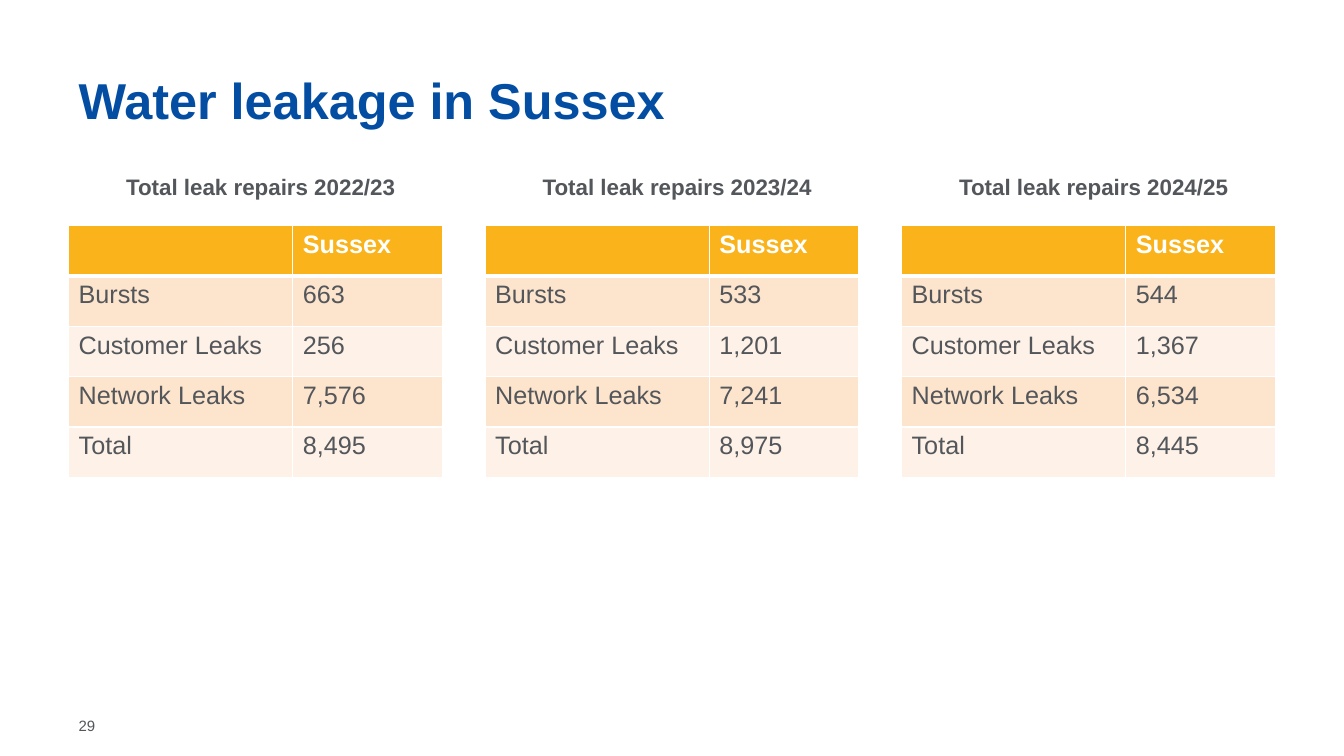
import pptx
import pptx.util
import pptx.dml.color
import pptx.enum.text
import pptx.oxml

Pt = pptx.util.Pt
ANCHOR = pptx.enum.text.MSO_ANCHOR
COLORS = {"title": "034EA2", "text": "53565A", "white": "FFFFFF",
          "header": "FAB31A", "dark_band": "FDE5CD", "light_band": "FEF2E8"}
FORMATS = {
    "title": {"size": Pt(36), "bold": True, "name": "Arial"},
    "caption": {"size": Pt(16), "bold": True, "name": "Arial"},
    "header": {"size": Pt(18), "bold": True, "name": "Arial"},
    "body": {"size": Pt(18), "bold": False, "name": "Arial"},
    "number": {"size": Pt(10.7), "bold": False, "name": "Arial"},
}
LABELS = ["Bursts", "Customer Leaks", "Network Leaks", "Total"]
REPAIRS = {
    "2022/23": ["663", "256", "7,576", "8,495"],
    "2023/24": ["533", "1,201", "7,241", "8,975"],
    "2024/25": ["544", "1,367", "6,534", "8,445"],
}


def rgb(key):
    """Return the named colour."""
    return pptx.dml.color.RGBColor.from_string(COLORS[key])


def write(tf, text, style, color):
    """Write one formatted paragraph and return it."""
    p = tf.paragraphs[0]
    r = p.add_run()
    r.text = text
    for name, value in FORMATS[style].items():
        setattr(r.font, name, value)
    r.font.color.rgb = rgb(color)
    return p


def add_title(s, x, y, w, h):
    """Place the slide title in the title placeholder."""
    sp = s.shapes.title
    sp.left, sp.top, sp.width, sp.height = Pt(x), Pt(y), Pt(w), Pt(h)
    tf = sp.text_frame
    tf.auto_size = pptx.enum.text.MSO_AUTO_SIZE.NONE
    tf.vertical_anchor = ANCHOR.TOP
    p = write(tf, "Water leakage in Sussex", "title", "title")
    p.alignment = pptx.enum.text.PP_ALIGN.LEFT
    p.line_spacing = Pt(40)


def add_text(s, x, y, w, h, text, style, anchor=ANCHOR.TOP):
    """Place a line of text in a box."""
    tf = s.shapes.add_textbox(Pt(x), Pt(y), Pt(w), Pt(h)).text_frame
    tf.word_wrap = True
    tf.vertical_anchor = anchor
    write(tf, text, style, "text")


def set_borders(cell, row):
    """Draw white cell borders, heavier below the header row."""
    widths = {"L": 1, "R": 1, "T": 3 if row == 1 else 1, "B": 3 if row == 0 else 1}
    tcPr = cell._tc.get_or_add_tcPr()
    for side, width in widths.items():
        tcPr.append(pptx.oxml.parse_xml(
            f'<a:ln{side} xmlns:a="http://schemas.openxmlformats.org/drawingml/2006/main" '
            f'w="{Pt(width)}"><a:solidFill><a:srgbClr val="{COLORS["white"]}"/>'
            f'</a:solidFill></a:ln{side}>'))


def add_repairs(s, x, y, w, h, year, values):
    """Place the caption and table of one year."""
    caption_h, table_top = 27, 41
    add_text(s, x + 34, y, 209, caption_h, f"Total leak repairs {year}", "caption")
    rows = [("", "Sussex"), *zip(LABELS, values)]
    tbl = s.shapes.add_table(len(rows), 2, Pt(x), Pt(y + table_top),
                             Pt(w), Pt(h - table_top)).table
    for column, share in zip(tbl.columns, (0.6, 0.4)):
        column.width = Pt(w * share)
    for i, row in enumerate(rows):
        band = "header" if i == 0 else "dark_band" if i % 2 else "light_band"
        for j, text in enumerate(row):
            cell = tbl.cell(i, j)
            set_borders(cell, i)
            cell.fill.solid()
            cell.fill.fore_color.rgb = rgb(band)
            if text:
                write(cell.text_frame, text, "body" if i else "header",
                      "text" if i else "white")


def build_slide(prs, x, y, w):
    """Build the leakage slide within its margins."""
    s = prs.slides.add_slide(prs.slide_layouts[5])
    add_title(s, x, y, w, 42)
    table_w = 267
    pitch = (w - table_w) / (len(REPAIRS) - 1)
    for i, (year, values) in enumerate(REPAIRS.items()):
        add_repairs(s, x + i * pitch, y + 71, table_w, 221, year, values)
    add_text(s, x, y + 455, 37.5, 29, "29", "number", ANCHOR.MIDDLE)


def main():
    """Create and save the presentation."""
    prs = pptx.Presentation()
    prs.slide_width, prs.slide_height = Pt(960), Pt(540)
    build_slide(prs, 49, 49, 862)
    prs.save("out.pptx")


if __name__ == "__main__":
    main()
